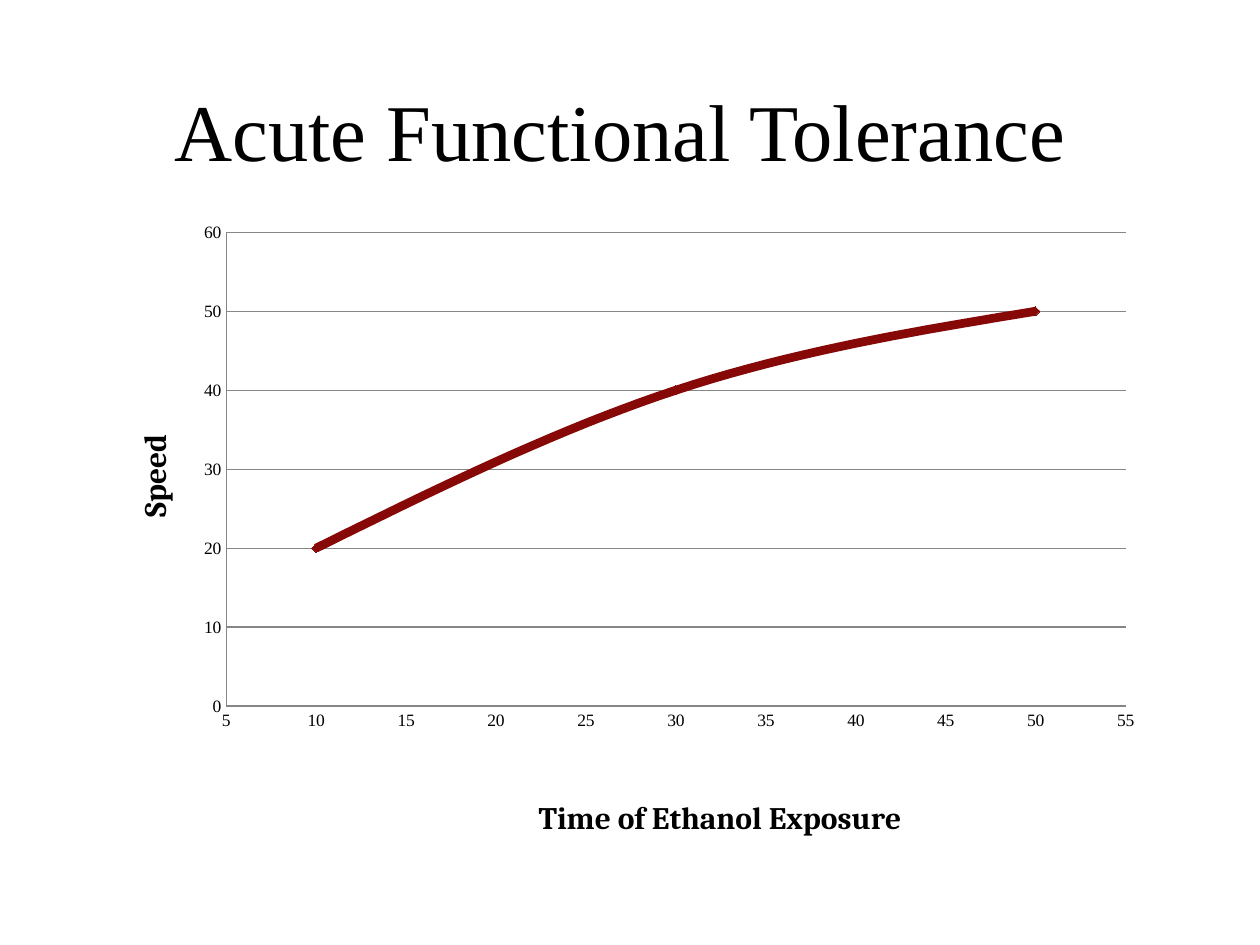
from lxml import etree
from pptx import Presentation
from pptx.chart.data import XyChartData
from pptx.dml.color import RGBColor
from pptx.enum.chart import XL_CHART_TYPE, XL_MARKER_STYLE, XL_TICK_MARK
from pptx.enum.text import MSO_ANCHOR, PP_ALIGN
from pptx.oxml.ns import qn
from pptx.util import Pt

SCATTER = XL_CHART_TYPE.XY_SCATTER_SMOOTH
DIAMOND = XL_MARKER_STYLE.DIAMOND
NO_TICK = XL_TICK_MARK.NONE
MIDDLE = MSO_ANCHOR.MIDDLE
CENTER = PP_ALIGN.CENTER

COLORS = {"text": "000000", "curve": "860908", "grid": "868686"}
BODY_FONT = "Times New Roman"
AXIS_FONT = "Cambria"
CHART_W, CHART_H = 594.72, 357.84


def color(name):
    return RGBColor.from_string(COLORS[name])


def format_font(font, size, name=BODY_FONT, bold=False):
    font.size = Pt(size)
    font.name = name
    font.bold = bold
    font.color.rgb = color("text")


def format_line(line, name, width):
    line.color.rgb = color(name)
    line.width = Pt(width)


def add_title(s, text, size):
    sp = s.shapes.title
    sp.left, sp.top, sp.width, sp.height = Pt(72), Pt(39.6), Pt(576), Pt(68.4)
    tf = sp.text_frame
    tf.vertical_anchor = MIDDLE
    p = tf.paragraphs[0]
    p.alignment = CENTER
    r = p.add_run()
    r.text = text
    format_font(r.font, size)


def set_layout(parent, before, x, y, w=None, h=None):
    for old in parent.findall(qn("c:layout")):
        parent.remove(old)
    values = {"xMode": "edge", "yMode": "edge", "x": x / CHART_W, "y": y / CHART_H}
    if w and h:
        size = {"w": w / CHART_W, "h": h / CHART_H}
        values = {"layoutTarget": "inner", **values, **size}
    layout = etree.Element(qn("c:layout"))
    manual = etree.SubElement(layout, qn("c:manualLayout"))
    for key, value in values.items():
        etree.SubElement(manual, qn(f"c:{key}")).set("val", str(value))
    parent.insert(before, layout)


def format_axis(axis, title, low, high, step, x, y):
    axis.minimum_scale, axis.maximum_scale = low, high
    axis.major_unit = step
    axis.major_tick_mark = axis.minor_tick_mark = NO_TICK
    format_line(axis.format.line, "grid", 0.75)
    axis.tick_labels.number_format = "General"
    axis.tick_labels.number_format_is_linked = False
    format_font(axis.tick_labels.font, 10)
    r = axis.axis_title.text_frame.paragraphs[0].add_run()
    r.text = title
    format_font(r.font, 18, AXIS_FONT, bold=True)
    set_layout(axis.axis_title._element, 1, x, y)


def format_curve(series):
    series.smooth = True
    series._element.find(qn("c:smooth")).set("val", "1")
    format_line(series.format.line, "curve", 5)
    marker = series.marker
    marker.style = DIAMOND
    marker.size = 5
    marker.format.fill.solid()
    marker.format.fill.fore_color.rgb = color("curve")
    marker.format.line.color.rgb = color("curve")


def add_curve_chart(s, points):
    data = XyChartData()
    series = data.add_series("Series 1")
    for x, y in points:
        series.add_data_point(x, y)
    chart = s.shapes.add_chart(
        SCATTER, Pt(72), Pt(126), Pt(CHART_W), Pt(CHART_H), data
    ).chart
    chart.has_title = chart.has_legend = False
    format_font(chart.font, 10)
    time_axis, speed_axis = chart.category_axis, chart.value_axis
    time_axis.has_major_gridlines = False
    speed_axis.has_major_gridlines = True
    format_line(speed_axis.major_gridlines.format.line, "grid", 0.75)
    format_axis(time_axis, "Time of Ethanol Exposure", 5, 55, 5, 232.5, 328.5)
    format_axis(speed_axis, "Speed", 0, 60, 10, 1, 120)
    plot = chart.plots[0]
    plot.vary_by_categories = False
    format_curve(plot.series[0])
    set_layout(chart._chartSpace.chart.plotArea, 0, 57.3, 6.8, 514, 272.7)


def main():
    prs = Presentation()
    prs.slide_width, prs.slide_height = Pt(720), Pt(540)
    s = prs.slides.add_slide(prs.slide_layouts[5])
    add_title(s, "Acute Functional Tolerance ", 46)
    add_curve_chart(s, [(10, 20), (30, 40), (50, 50)])
    prs.save("out.pptx")


if __name__ == "__main__":
    main()
